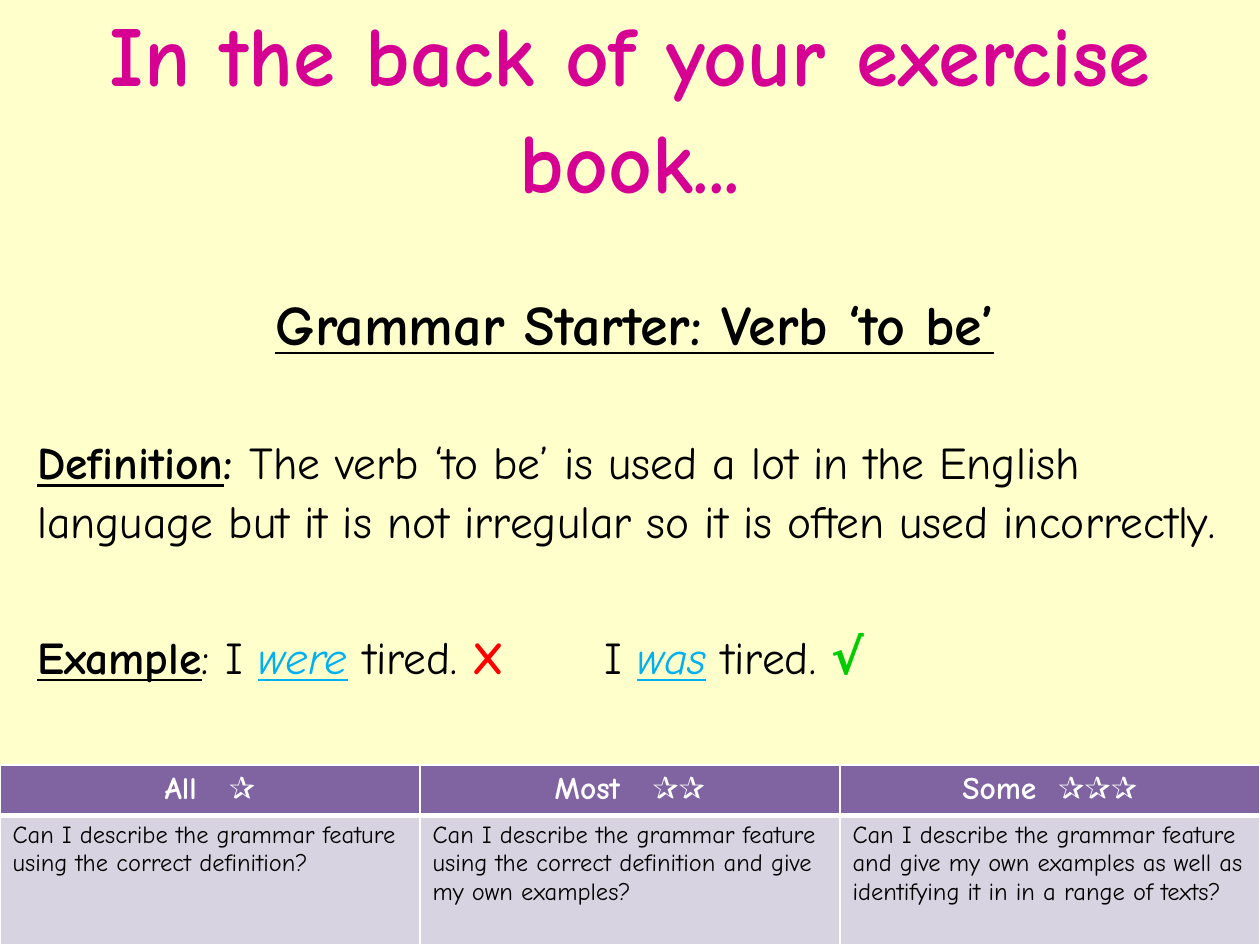
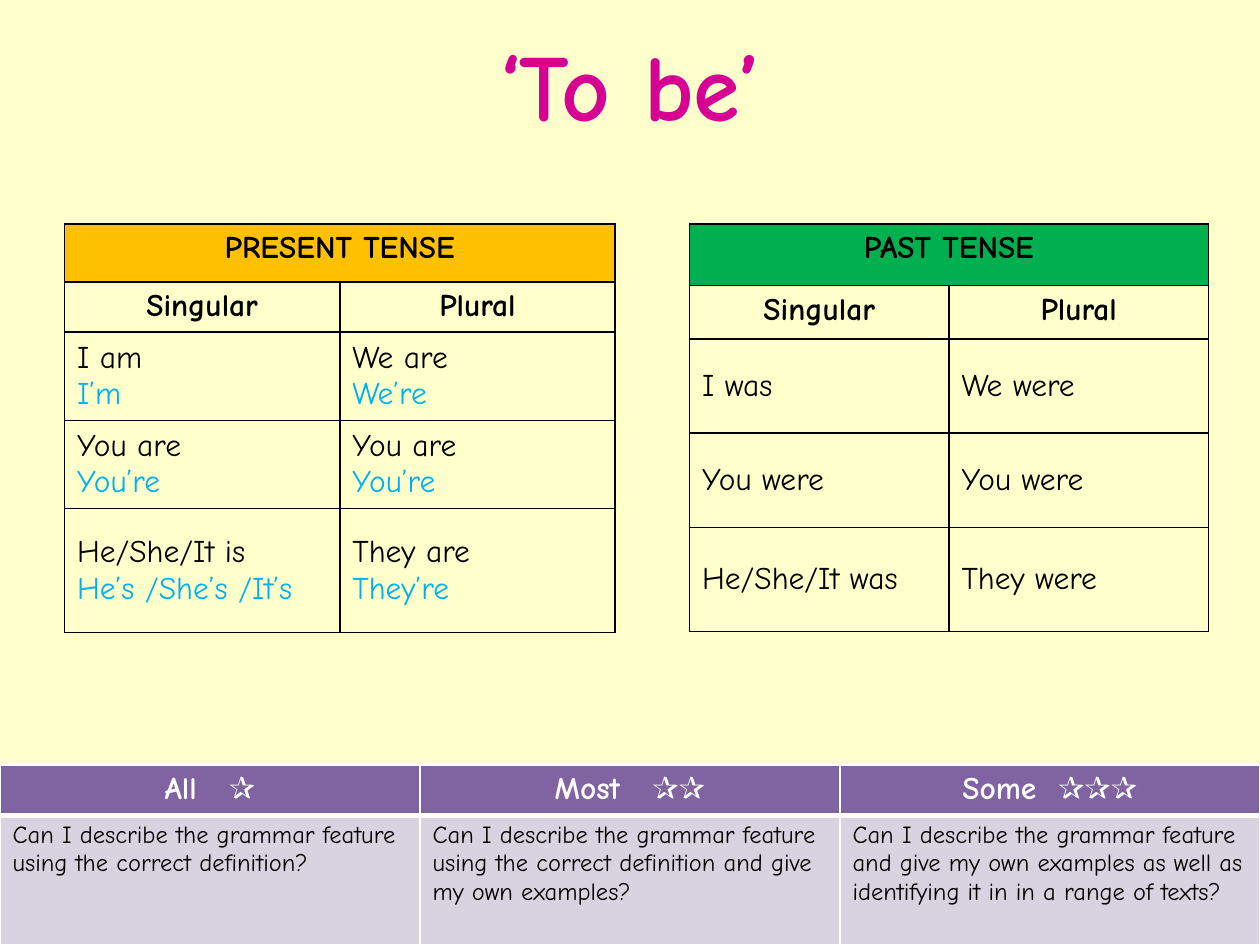
"""Build two grammar starter slides on the verb 'to be'."""
import dataclasses

import lxml.etree
import pptx
import pptx.dml.color
import pptx.enum.text
import pptx.oxml.ns
import pptx.util

Cm, Pt = pptx.util.Cm, pptx.util.Pt
ALIGN = pptx.enum.text.PP_ALIGN
ANCHOR = pptx.enum.text.MSO_ANCHOR


@dataclasses.dataclass(frozen=True)
class Theme:
    """Colours and type sizes of the deck."""
    font: str = "Comic Neue"
    page: str = "FFFFCC"
    title: str = "D60093"
    ink: str = "000000"
    white: str = "FFFFFF"
    blue: str = "00B0F0"
    red: str = "FF0000"
    tick: str = "00CC00"
    purple: str = "8064A2"
    lilac: str = "D8D3E0"
    amber: str = "FFC000"
    green: str = "00B050"
    big: float = 54
    long: float = 48.6
    head: float = 32
    body: float = 26
    mark: float = 28
    cell: float = 18
    goal: float = 14


LOOK = Theme()
WIDE, HIGH = 25.4, 19.05
GOALS = [
    ("All", 12, "✰", "Can I describe the grammar feature using the correct definition?"),
    ("Most", 12, "✰✰", "Can I describe the grammar feature using the correct definition "
                       "and give my own examples?"),
    ("Some", 6, "✰✰✰", "Can I describe the grammar feature and give my own examples "
                       "as well as identifying it in in a range of texts?"),
]
PRESENT = [
    (("I am", "I’m"), ("We are", "We’re")),
    (("You are", "You’re"), ("You are", "You’re")),
    (("He/She/It is", "He’s /She’s /It’s"), ("They are", "They’re")),
]
PAST = [
    (("I was",), ("We were",)),
    (("You were",), ("You were",)),
    (("He/She/It was",), ("They were",)),
]


def tint(code):
    """Turn a hex code into a colour."""
    return pptx.dml.color.RGBColor.from_string(code)


def apply(thing, form):
    """Set each value of a format dict on an object."""
    for name, value in form.items():
        setattr(thing, name, value)


def add_run(para, text, size, ink=LOOK.ink, gap=0, **form):
    """Add a run of text, with extra letter gap in points."""
    run = para.add_run()
    run.text = text
    apply(run.font, {"name": LOOK.font, "size": Pt(size), **form})
    run.font.color.rgb = tint(ink)
    if gap:
        run.font._element.set("spc", str(gap * 100))


def add_box(slide, box, anchor=ANCHOR.TOP):
    """Add a wrapping text box and return its frame."""
    frame = slide.shapes.add_textbox(*map(Cm, box)).text_frame
    apply(frame, {"word_wrap": True, "vertical_anchor": anchor})
    return frame


def add_title(slide, box, text, size):
    """Add the centred slide title."""
    para = add_box(slide, box, ANCHOR.MIDDLE).paragraphs[0]
    apply(para, {"alignment": ALIGN.CENTER, "line_spacing": 1.04})
    add_run(para, text, size, LOOK.title, bold=True)


def add_grid(slide, box, cols, rows):
    """Add a plain table with equal columns and the given row heights."""
    left, top, width = box
    spot = map(Cm, (left, top, width, sum(rows)))
    grid = slide.shapes.add_table(len(rows), cols, *spot).table
    apply(grid, {"first_row": False, "horz_banding": False})
    for col in grid.columns:
        col.width = Cm(width / cols)
    for row, height in zip(grid.rows, rows):
        row.height = Cm(height)
    return grid


def dress(cell, line, fill=None, **wide):
    """Give a cell its borders, one point unless told, and its fill."""
    props = cell._tc.get_or_add_tcPr()
    qn = pptx.oxml.ns.qn
    for side in "LRTB":
        edge = lxml.etree.SubElement(props, qn(f"a:ln{side}"), w=str(Pt(wide.get(side, 1))))
        solid = lxml.etree.SubElement(edge, qn("a:solidFill"))
        lxml.etree.SubElement(solid, qn("a:srgbClr"), val=line)
    if fill:
        cell.fill.solid()
        cell.fill.fore_color.rgb = tint(fill)
    else:
        cell.fill.background()


def add_head(cell, text, ink=LOOK.ink):
    """Write a bold centred heading in a cell and return its paragraph."""
    para = cell.text_frame.paragraphs[0]
    para.alignment = ALIGN.CENTER
    add_run(para, text, LOOK.cell, ink, bold=True)
    return para


def add_goals(slide, box):
    """Add the band of lesson goals."""
    grid = add_grid(slide, box, len(GOALS), (0.95, 2.6))
    for col, (name, gap, stars, goal) in enumerate(GOALS):
        top, low = grid.cell(0, col), grid.cell(1, col)
        para = add_head(top, name, LOOK.white)
        add_run(para, " ", LOOK.cell, LOOK.white, gap, bold=True)
        add_run(para, stars, LOOK.cell, LOOK.white, bold=True)
        add_run(low.text_frame.paragraphs[0], goal, LOOK.goal)
        dress(top, LOOK.white, LOOK.purple, B=3)
        dress(low, LOOK.white, LOOK.lilac, T=3)


def add_tense(slide, box, name, fill, rows, forms):
    """Add a table of verb forms for one tense."""
    grid = add_grid(slide, box, 2, rows)
    for row in range(len(rows)):
        for col in range(2):
            dress(grid.cell(row, col), LOOK.ink, None if row else fill)
    grid.cell(0, 0).merge(grid.cell(0, 1))
    add_head(grid.cell(0, 0), name)
    for col, text in enumerate(("Singular", "Plural")):
        add_head(grid.cell(1, col), text)
    for row, pair in enumerate(forms, 2):
        for col, lines in enumerate(pair):
            cell = grid.cell(row, col)
            cell.vertical_anchor = ANCHOR.MIDDLE
            frame = cell.text_frame
            for spot, (text, ink) in enumerate(zip(lines, (LOOK.ink, LOOK.blue))):
                para = frame.add_paragraph() if spot else frame.paragraphs[0]
                add_run(para, text, LOOK.cell, ink)


def add_starter(slide, box):
    """Add the heading, definition and example of the starter."""
    frame = add_box(slide, box)
    label = {"bold": True, "underline": True}
    verb = {"ink": LOOK.blue, "italic": True, "underline": True}
    parts = [
        [("Definition", label), (": ", {"bold": True}),
         ("The verb ‘to be’ is used a lot in the English language but it is "
          "not irregular so it is often used incorrectly.", {})],
        [("Example", label), (": I ", {}), ("were", verb), (" tired. ", {}),
         ("X\t\t", {"ink": LOOK.red, "bold": True}), ("I ", {}), ("was", verb),
         (" tired. ", {}), ("√", {"ink": LOOK.tick, "size": LOOK.mark, "bold": True})],
    ]
    para = frame.paragraphs[0]
    apply(para, {"alignment": ALIGN.CENTER, "space_before": Pt(6.4)})
    add_run(para, "Grammar Starter: Verb ‘to be’", LOOK.head, **label)
    for part in parts:
        para = frame.add_paragraph()
        apply(para, {"space_before": Pt(42), "line_spacing": 1.07})
        for text, form in part:
            add_run(para, text, **{"size": LOOK.body, **form})


def add_page(deck, title, size, height):
    """Add a slide with page colour, title and goals."""
    slide = deck.slides.add_slide(deck.slide_layouts[6])
    fill = slide.background.fill
    fill.solid()
    fill.fore_color.rgb = tint(LOOK.page)
    add_title(slide, (0, 0.05, WIDE, height), title, size)
    add_goals(slide, (0, 15.42, WIDE))
    return slide


def main():
    """Build and save the deck."""
    deck = pptx.Presentation()
    apply(deck, {"slide_width": Cm(WIDE), "slide_height": Cm(HIGH)})
    first = add_page(deck, "In the back of your exercise book...", LOOK.long, 4.09)
    add_starter(first, (0.5, 5.72, 24.6, 9.3))
    second = add_page(deck, "‘To be’", LOOK.big, 3.18)
    add_tense(second, (1.3, 4.52, 11.1), "PRESENT TENSE", LOOK.amber,
              (1.16, 1, 1.77, 1.77, 2.5), PRESENT)
    add_tense(second, (13.9, 4.52, 10.46), "PAST TENSE", LOOK.green,
              (1.24, 1.07, 1.9, 1.9, 2.1), PAST)
    deck.save("out.pptx")


if __name__ == "__main__":
    main()
